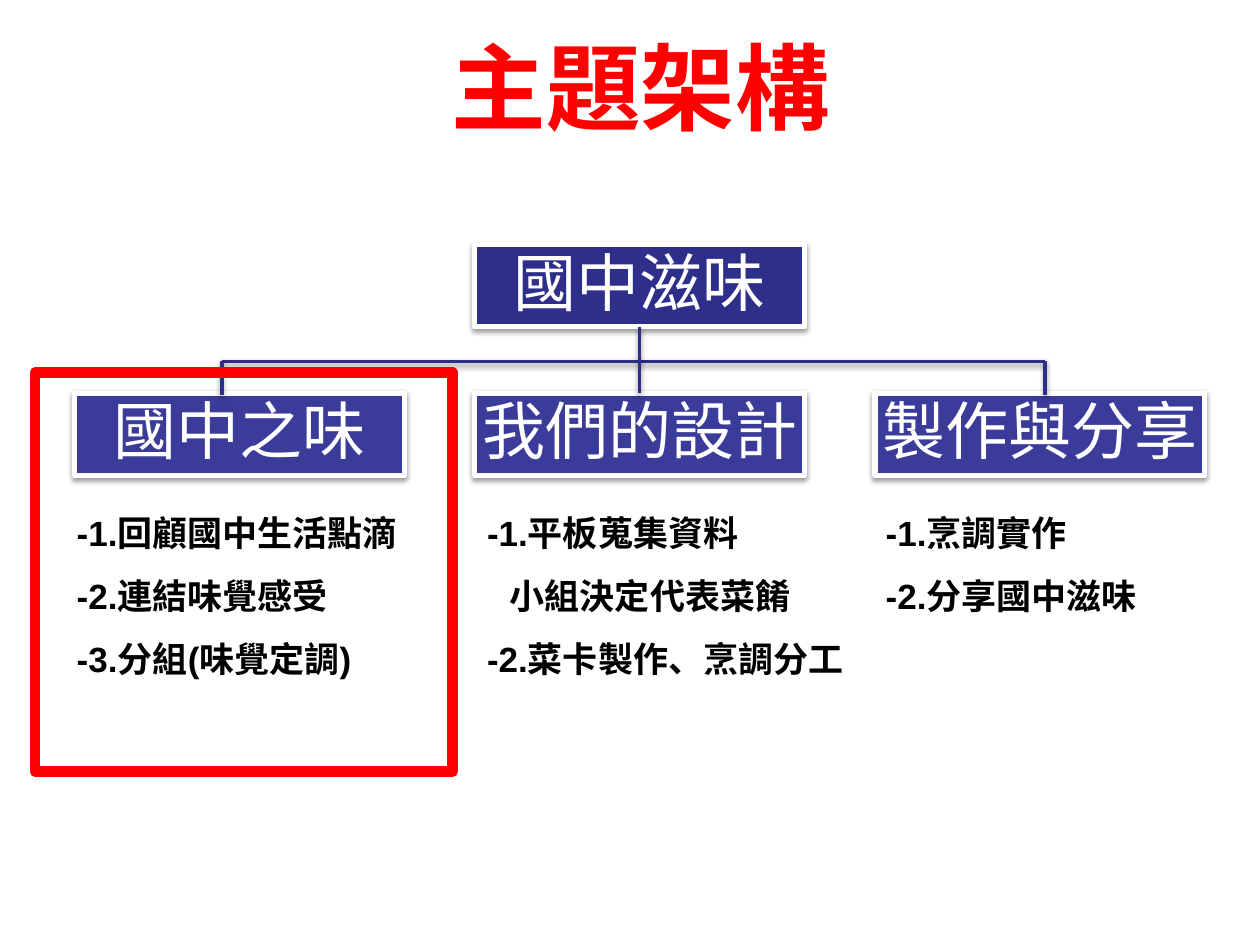
from lxml import etree
from pptx import Presentation
from pptx.dml.color import RGBColor
from pptx.enum import shapes, text
from pptx.oxml import ns
from pptx.util import Pt

HUES = {"red": "FF0000", "root": "2E2E8B", "node": "3B3B9A",
        "line": "2D2D8A", "white": "FFFFFF", "black": "000000"}
TITLE = "主題架構"
ROOT = "國中滋味"
THEMES = [
    ("國中之味", 36.75, 201, [
        ("-1.回顧國中生活點滴", 0), ("-2.連結味覺感受", 0), ("-3.分組(味覺定調)", 0)]),
    ("我們的設計", 271.25, 221, [
        ("-1.平板蒐集資料", 0), ("小組決定代表菜餚", 13), ("-2.菜卡製作、烹調分工", 0)]),
    ("製作與分享", 499, 160, [("-1.烹調實作", 0), ("-2.分享國中滋味", 0)]),
]
LEFT, STEP, WIDE, HIGH = 42.5, 228.75, 188.5, 47
TOP, NEXT, BUS = 139.75, 224.75, 206.5
ENDS = (126.75, 597.25)


def hue(name):
    return RGBColor.from_string(HUES[name])


def shade(item):
    fx = etree.SubElement(item._element.spPr, ns.qn("a:effectLst"))
    drop = etree.SubElement(fx, ns.qn("a:outerShdw"), blurRad=str(Pt(3.1)),
                            dist=str(Pt(1.6)), dir="5400000", rotWithShape="0")
    tint = etree.SubElement(drop, ns.qn("a:srgbClr"), val=HUES["black"])
    etree.SubElement(tint, ns.qn("a:alpha"), val="38000")


def style(para, size, color, bold=False, name="Arial"):
    font = para.font
    font.name, font.size, font.bold = name, Pt(size), bold
    font.color.rgb = hue(color)


def add_node(slide, label, x, y, color):
    box = slide.shapes.add_shape(shapes.MSO_SHAPE.RECTANGLE, Pt(x), Pt(y), Pt(WIDE), Pt(HIGH))
    box.fill.solid()
    box.fill.fore_color.rgb = hue(color)
    box.line.color.rgb = hue("white")
    box.line.width = Pt(3)
    shade(box)
    frame = box.text_frame
    frame.vertical_anchor = text.MSO_ANCHOR.MIDDLE
    frame.margin_left = frame.margin_right = Pt(1.5)
    frame.margin_top = frame.margin_bottom = Pt(1.5)
    para = frame.paragraphs[0]
    para.text = label
    para.alignment = text.PP_ALIGN.CENTER
    para.line_spacing = 0.9
    style(para, 36, "white")
    return box


def add_line(slide, x1, y1, x2, y2):
    line = slide.shapes.add_connector(shapes.MSO_CONNECTOR.STRAIGHT, Pt(x1), Pt(y1), Pt(x2), Pt(y2))
    line.line.color.rgb = hue("line")
    line.line.width = Pt(2)
    shade(line)
    return line


def add_list(slide, rows, x, wide):
    box = slide.shapes.add_textbox(Pt(x), Pt(277), Pt(wide), Pt(38 * len(rows)))
    frame = box.text_frame
    frame.word_wrap = True
    for i, (row, indent) in enumerate(rows):
        para = frame.add_paragraph() if i else frame.paragraphs[0]
        para.text = row
        para.line_spacing = 1.5
        if indent:
            para._p.get_or_add_pPr().set("marL", str(Pt(indent)))
        style(para, 20, "black", True)


def main():
    deck = Presentation()
    deck.slide_width, deck.slide_height = Pt(720), Pt(540)
    slide = deck.slides.add_slide(deck.slide_layouts[5])

    title = slide.shapes.title
    title.left, title.top, title.width, title.height = Pt(60), Pt(9.5), Pt(612), Pt(78.5)
    title.text_frame.text = TITLE
    title.text_frame.auto_size = text.MSO_AUTO_SIZE.NONE
    title.text_frame.vertical_anchor = text.MSO_ANCHOR.MIDDLE
    head = title.text_frame.paragraphs[0]
    head.alignment = text.PP_ALIGN.CENTER
    style(head, 54, "red", True, "Noto Sans CJK SC")

    root = add_node(slide, ROOT, LEFT + STEP, TOP, "root")
    nodes = [add_node(slide, theme[0], LEFT + i * STEP, NEXT, "node")
             for i, theme in enumerate(THEMES)]

    add_line(slide, ENDS[0], BUS, ENDS[1], BUS)
    mid = LEFT + STEP + WIDE / 2
    stem = add_line(slide, mid, TOP + HIGH, mid, NEXT)
    stem.begin_connect(root, 2)
    stem.end_connect(nodes[1], 0)
    for x in ENDS:
        add_line(slide, x, BUS, x, NEXT + 1)

    for _, x, wide, rows in THEMES:
        add_list(slide, rows, x, wide)

    frame = slide.shapes.add_shape(shapes.MSO_SHAPE.RECTANGLE, Pt(20), Pt(213), Pt(238.5), Pt(228))
    frame.shadow.inherit = False
    frame.fill.background()
    frame.line.color.rgb = hue("red")
    frame.line.width = Pt(6)

    deck.save("out.pptx")


if __name__ == "__main__":
    main()
